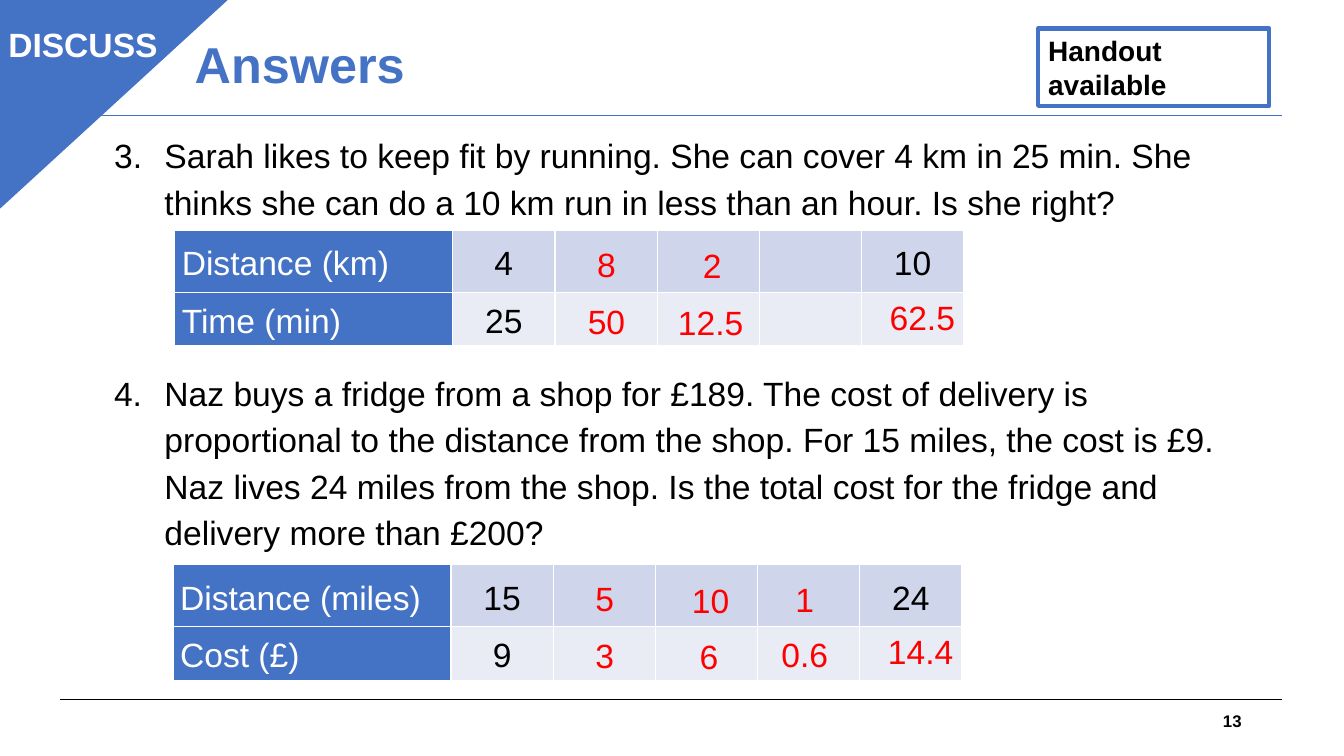
from lxml.etree import SubElement
from pptx import Presentation
from pptx.dml.color import RGBColor
from pptx.enum.shapes import MSO_CONNECTOR, MSO_SHAPE
from pptx.enum.text import MSO_ANCHOR as ANCHOR, PP_ALIGN as ALIGN
from pptx.oxml.ns import qn
from pptx.util import Emu, Inches, Pt

COLORS = {"blue": "4472C4", "black": "000000", "white": "FFFFFF",
          "red": "FF0000", "band1": "CFD5EA", "band2": "E9EBF5"}
COLUMNS = 160
QUESTION_X = 12.4
LABEL_W, VALUE_W = 33.1, 12.17
ROW_HEIGHTS = (7.4, 6.4)
ANSWER_SLOTS = [(46.9, 1, 9), (46.9, 7.8, 9), (59.5, 1.2, 9), (58.7, 7.9, 10.2),
                (83.9, 7.3, 10.2), (70.7, 1.1, 9), (70.7, 7.7, 9)]


class Deck:
    """Draws styled elements on a slide measured in a grid of 160 by 90 squares."""

    def __init__(self):
        self.prs = Presentation()
        self.prs.slide_width, self.prs.slide_height = Inches(13.333), Inches(7.5)
        self.unit = self.prs.slide_width / COLUMNS
        self.s = self.prs.slides.add_slide(self.prs.slide_layouts[6])

    def grid(self, *values):
        return [Emu(round(v * self.unit)) for v in values]

    def color(self, name):
        return RGBColor.from_string(COLORS[name])

    def fill_text(self, tf, text, size=24, color="black", bold=False, align=ALIGN.LEFT,
                  spacing=None, after=None, number=None):
        p = tf.paragraphs[0]
        if number:
            pPr = p._p.get_or_add_pPr()
            pPr.set("marL", str(Inches(0.5)))
            pPr.set("indent", str(-Inches(0.5)))
            SubElement(pPr, qn("a:buFont"), typeface="+mj-lt")
            SubElement(pPr, qn("a:buAutoNum"), type="arabicPeriod", startAt=str(number))
        p.alignment = align
        if spacing:
            p.line_spacing = spacing
        if after:
            p.space_after = Pt(after)
        for i, line in enumerate(text.split("\n")):
            if i:
                p.add_line_break()
            r = p.add_run()
            r.text = line
            r.font.name, r.font.size, r.font.bold = "Arial", Pt(size), bold
            r.font.color.rgb = self.color(color)

    def text(self, box, text, anchor=ANCHOR.TOP, **style):
        tf = self.s.shapes.add_textbox(*self.grid(*box)).text_frame
        tf.word_wrap = True
        tf.vertical_anchor = anchor
        self.fill_text(tf, text, **style)

    def question(self, number, y, w, h, text):
        self.text((QUESTION_X, y, w, h), text, number=number, spacing=1.15, after=10)

    def rule(self, y, color):
        x1, x2, top = self.grid(7.1, 152.6, y)
        sp = self.s.shapes.add_connector(MSO_CONNECTOR.STRAIGHT, x1, top, x2, top)
        sp.line.color.rgb = self.color(color)
        sp.line.width = Pt(0.75)
        SubElement(sp._element.spPr, qn("a:effectLst"))

    def shape(self, kind, box, line_width, fill=None):
        sp = self.s.shapes.add_shape(kind, *self.grid(*box))
        sp.shadow.inherit = False
        if fill:
            sp.fill.solid()
            sp.fill.fore_color.rgb = self.color(fill)
        else:
            sp.fill.background()
        sp.line.color.rgb = self.color("blue")
        sp.line.width = Pt(line_width)
        return sp

    def corner(self, box):
        sp = self.shape(MSO_SHAPE.ISOSCELES_TRIANGLE, box, 1, "blue")
        sp.adjustments[0] = 0
        sp.rotation = 180
        sp._element.spPr.xfrm.set("flipH", "1")

    def badge(self, box, text):
        tf = self.shape(MSO_SHAPE.RECTANGLE, box, 3).text_frame
        tf.word_wrap = True
        tf.vertical_anchor = ANCHOR.TOP
        self.fill_text(tf, text, size=20, bold=True)

    def cell(self, cell, fill):
        cell.margin_left = cell.margin_right = Inches(0.07)
        cell.margin_top = cell.margin_bottom = 0
        cell.vertical_anchor = ANCHOR.MIDDLE
        tcPr = cell._tc.get_or_add_tcPr()
        for side in ("lnL", "lnR", "lnT", "lnB"):
            ln = SubElement(tcPr, qn(f"a:{side}"), w=str(Pt(1)))
            SubElement(SubElement(ln, qn("a:solidFill")), qn("a:srgbClr"),
                       val=COLORS["white"])
        cell.fill.solid()
        cell.fill.fore_color.rgb = self.color(fill)

    def ratio_table(self, x, y, rows):
        widths = [LABEL_W] + [VALUE_W] * 5
        box = self.grid(x, y, sum(widths), sum(ROW_HEIGHTS))
        tbl = self.s.shapes.add_table(len(rows), len(widths), *box).table
        tbl.first_row = tbl.horz_banding = False
        for col, w in zip(tbl.columns, self.grid(*widths)):
            col.width = w
        for row, h in zip(tbl.rows, self.grid(*ROW_HEIGHTS)):
            row.height = h
        for i, (values, band) in enumerate(zip(rows, ("band1", "band2"))):
            for j, value in enumerate(values):
                cell = tbl.cell(i, j)
                self.cell(cell, band if j else "blue")
                if value:
                    self.fill_text(cell.text_frame, value,
                                   color="black" if j else "white",
                                   align=ALIGN.CENTER if j else ALIGN.LEFT,
                                   spacing=1.15, after=10)

    def answers(self, x, y, values):
        for (dx, dy, w), value in zip(ANSWER_SLOTS, values):
            self.text((x + dx, y + dy, w, 6), value, color="red", align=ALIGN.CENTER)


def main():
    d = Deck()
    d.rule(83.3, "black")
    d.rule(13.7, "blue")
    d.text((113, 83.4, 36, 4.8), "13", ANCHOR.MIDDLE, size=12, bold=True,
           align=ALIGN.RIGHT)
    d.text((22, 1.4, 104.3, 13.3), "Answers", ANCHOR.MIDDLE, size=36, color="blue",
           bold=True, spacing=0.9)
    d.corner((-0.3, -0.2, 27.5, 25.2))
    d.badge((123.6, 3.4, 27.5, 9.2), "Handout\navailable")
    d.text((-0.2, 2.2, 21, 6), "DISCUSS", color="white", bold=True)

    d.question(3, 14.8, 132.5, 11.9,
               "Sarah likes to keep fit by running. She can cover 4 km in 25 min. "
               "She thinks she can do a 10 km run in less than an hour. Is she right?")
    d.ratio_table(20.8, 27.4, [("Distance (km)", "4", "", "", "", "10"),
                               ("Time (min)", "25", "", "", "", "")])
    d.answers(20.8, 27.4, ["8", "50", "2", "12.5", "62.5"])

    d.question(4, 43.1, 139.3, 23,
               "Naz buys a fridge from a shop for £189. The cost of delivery is "
               "proportional to the distance from the shop. For 15 miles, the cost is £9. "
               "Naz lives 24 miles from the shop. Is the total cost for the fridge and "
               "delivery more than £200?")
    d.ratio_table(20.6, 67.2, [("Distance (miles)", "15", "", "", "", "24"),
                               ("Cost (£)", "9", "", "", "", "")])
    d.answers(20.6, 67.2, ["5", "3", "10", "6", "14.4", "1", "0.6"])
    d.prs.save("out.pptx")


if __name__ == "__main__":
    main()
